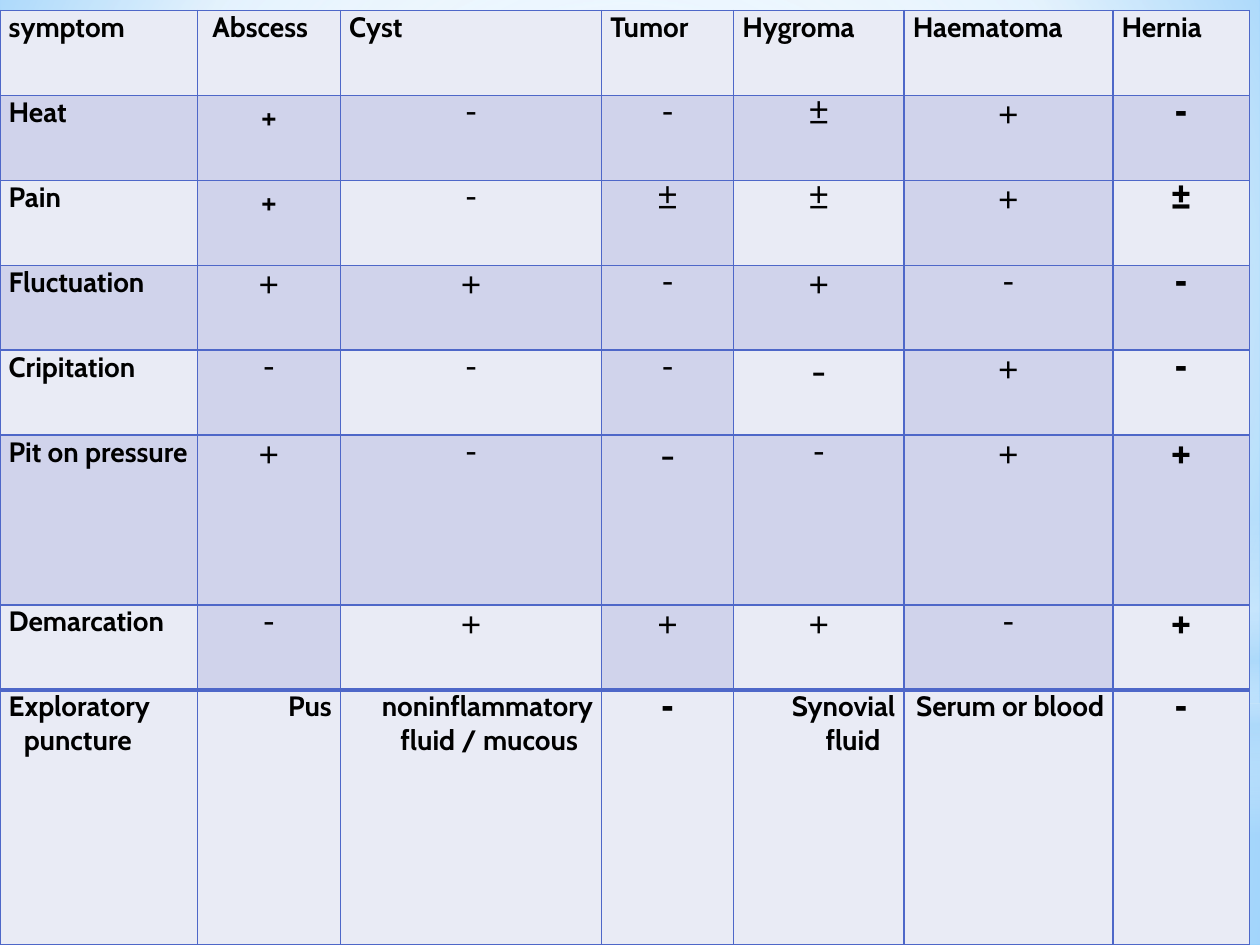
from itertools import product
from lxml.etree import SubElement, Element
from pptx import Presentation
from pptx.dml.color import RGBColor
from pptx.enum.shapes import MSO_SHAPE as Shape
from pptx.enum.text import PP_ALIGN as Align
from pptx.oxml.ns import qn
from pptx.util import Pt

COLORS = {"text": "000000", "line": "4E67C8", "light": "E9EBF5", "dark": "D0D3EB",
          "white": "FFFFFF", "pale": "B4DCFA", "sky": "9ED5FF", "blue": "5BB9FF"}
FONT = "Cabin"
ROWS = [
    ["symptom", " Abscess", "Cyst", "Tumor", "Hygroma", "Haematoma", "Hernia"],
    ["Heat", "+", "-", "-", "±", "+", "-"],
    ["Pain", "+", "-", "±", "±", "+", "±"],
    ["Fluctuation", "+", "+", "-", "+", "-", "-"],
    ["Cripitation", "-", "-", "-", "-", "+", "-"],
    ["Pit on pressure", "+", "-", "-", "-", "+", "+"],
    ["Demarcation", "-", "+", "+", "+", "-", "+"],
    ["Exploratory puncture", "Pus", "noninflammatory fluid / mucous", "-",
     "Synovial fluid", "Serum or blood", "-"],
]
LEFT_TO_RIGHT_SIGNS = {(1, 1), (2, 1), (4, 4), (5, 3)}
COLUMN_WIDTHS = [112.8, 81.8, 149.3, 75.4, 97.4, 119.3, 78]
ROW_UNITS = [1, 1, 1, 1, 1, 2, 1, 3]
ROW_UNIT = 48.55
TABLE_TOP = 6
CENTER = (50, 50, 50, 50)
BACKDROP = ([(0, "sky", 100), (60, "white", 100), (100, "blue", 100)], (20, 10, 20, 60))
GLOWS = [
    (Shape.RECTANGLE, 401.8, 138.2,
     [(0, "white", 91), (37, "white", 76), (100, "pale", 79)], CENTER),
    (Shape.RECTANGLE, 0, 401.8,
     [(0, "white", 89), (48, "white", 62), (100, "pale", 79)], CENTER),
    (Shape.RECTANGLE, 296.6, 180,
     [(0, "white", 0), (29, "white", 30), (45, "pale", 40), (55, "white", 26),
      (65, "pale", 60), (100, "white", 0)], None),
    (Shape.OVAL, 126, 401.8, [(0, "white", 100), (56, "white", 0)], CENTER),
]


def paint_gradient(owner, fill, stops, focus):
    fill.solid()
    solid = next(owner.iter(qn("a:solidFill")))
    gradient = Element(qn("a:gradFill"), rotWithShape="1")
    stop_list = SubElement(gradient, qn("a:gsLst"))
    for position, color, opacity in stops:
        stop = SubElement(stop_list, qn("a:gs"), pos=str(position * 1000))
        tint = SubElement(stop, qn("a:srgbClr"), val=COLORS[color])
        if opacity < 100:
            SubElement(tint, qn("a:alpha"), val=str(opacity * 1000))
    if focus:
        route = SubElement(gradient, qn("a:path"))
        route.set("path", "circle")
        edges = {side: str(value * 1000) for side, value in zip("ltrb", focus)}
        SubElement(route, qn("a:fillToRect"), **edges)
    else:
        SubElement(gradient, qn("a:lin"), ang=str(90 * 60000), scaled="0")
    solid.getparent().replace(solid, gradient)


def draw_borders(cell, row):
    properties = cell._tc.get_or_add_tcPr()
    heavy = {7: "T", 6: "B"}.get(row)
    for index, side in enumerate("LRTB"):
        width = 2 if side == heavy else 1
        border = Element(qn(f"a:ln{side}"), w=str(Pt(width)))
        fill = SubElement(border, qn("a:solidFill"))
        SubElement(fill, qn("a:srgbClr"), val=COLORS["line"])
        properties.insert(index, border)


def fill_cell(cell, row, column):
    text = ROWS[row][column]
    is_sign = text in "+-±"
    is_dark = 1 <= row <= 6 and (row % 2 == 1 or column % 2 == 1)
    cell.fill.solid()
    cell.fill.fore_color.rgb = RGBColor.from_string(COLORS["dark" if is_dark else "light"])
    cell.margin_left = cell.margin_right = Pt(5)
    cell.margin_top = cell.margin_bottom = 0
    para = cell.text_frame.paragraphs[0]
    para.alignment = Align.CENTER if is_sign else Align.JUSTIFY
    properties = para._p.get_or_add_pPr()
    properties.set("marL", str(Pt(8.6)))
    properties.set("indent", str(-Pt(8.6)))
    if row and column and (row, column) not in LEFT_TO_RIGHT_SIGNS:
        properties.set("rtl", "1")
    span = para.add_run()
    span.text = text
    span.font.name = FONT
    span.font.size = Pt(20 if is_sign else 16)
    span.font.bold = not is_sign or column == 6 or row == 7
    span.font.color.rgb = RGBColor.from_string(COLORS["text"])
    draw_borders(cell, row)


def main():
    deck = Presentation()
    deck.slide_width, deck.slide_height = Pt(720), Pt(540)
    page = deck.slides.add_slide(deck.slide_layouts[6])
    paint_gradient(page.element, page.background.fill, *BACKDROP)

    for kind, top, height, stops, focus in GLOWS:
        glow = page.shapes.add_shape(kind, 0, Pt(top), Pt(720), Pt(height))
        glow.shadow.inherit = False
        glow.line.fill.background()
        paint_gradient(glow.element, glow.fill, stops, focus)

    frame = page.shapes.add_table(len(ROWS), len(COLUMN_WIDTHS), 0, Pt(TABLE_TOP),
                                  Pt(sum(COLUMN_WIDTHS)), Pt(sum(ROW_UNITS) * ROW_UNIT))
    table = frame.table
    table.first_row = table.horz_banding = False
    for column, width in zip(table.columns, COLUMN_WIDTHS):
        column.width = Pt(width)
    for row, units in zip(table.rows, ROW_UNITS):
        row.height = Pt(units * ROW_UNIT)
    for row, column in product(range(len(ROWS)), range(len(COLUMN_WIDTHS))):
        fill_cell(table.cell(row, column), row, column)

    deck.save("out.pptx")


if __name__ == "__main__":
    main()
